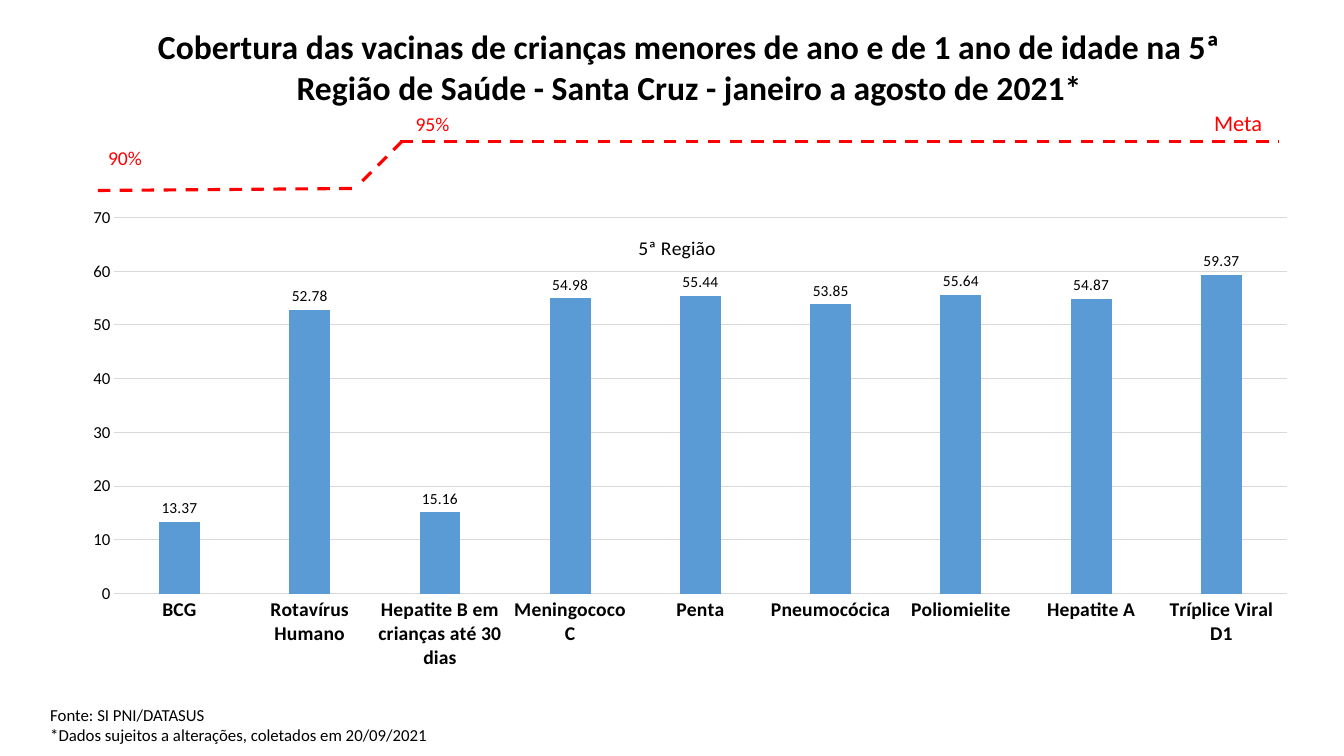
from dataclasses import dataclass
from lxml import etree
from pptx import Presentation
from pptx.chart.data import CategoryChartData
from pptx.dml.color import RGBColor
from pptx.enum.chart import XL_CHART_TYPE as ChartType
from pptx.enum.chart import XL_LABEL_POSITION as LabelPosition
from pptx.enum.chart import XL_TICK_MARK as TickMark
from pptx.enum.dml import MSO_LINE_DASH_STYLE as Dash
from pptx.enum.shapes import MSO_CONNECTOR as Connector
from pptx.enum.text import PP_ALIGN as Align
from pptx.oxml.ns import qn
from pptx.util import Inches, Pt


@dataclass(frozen=True)
class Theme:
    font: str = "Calibri"
    ink: RGBColor = RGBColor(0, 0, 0)
    goal: RGBColor = RGBColor(0xFF, 0, 0)
    bar: RGBColor = RGBColor(0x5B, 0x9B, 0xD5)
    grid: RGBColor = RGBColor(0xD9, 0xD9, 0xD9)
    title: int = 24
    goal_name: int = 16
    body: int = 14
    small: int = 12
    value: int = 11
    base: int = 10
    goal_line: float = 2.25
    grid_line: float = 0.75


THEME = Theme()

COVERAGE = {
    "BCG": 13.37,
    "Rotavírus Humano": 52.78,
    "Hepatite B em crianças até 30 dias": 15.16,
    "Meningococo C": 54.98,
    "Penta": 55.44,
    "Pneumocócica": 53.85,
    "Poliomielite": 55.64,
    "Hepatite A": 54.87,
    "Tríplice Viral D1": 59.37,
}


def style_font(font, size, color=THEME.ink, bold=False):
    font.name, font.size, font.bold = THEME.font, Pt(size), bold
    font.color.rgb = color


def add_text(slide, box, lines, size, color=THEME.ink, bold=False,
             align=Align.LEFT, wrap=True):
    frame = slide.shapes.add_textbox(*map(Inches, box)).text_frame
    frame.word_wrap = wrap
    for i, line in enumerate(lines):
        paragraph = frame.add_paragraph() if i else frame.paragraphs[0]
        paragraph.alignment = align
        run = paragraph.add_run()
        run.text = line
        style_font(run.font, size, color, bold)


def set_layout(parent, index, **values):
    """Give a chart part a manual layout as fractions of the chart."""
    old = parent.find(qn("c:layout"))
    if old is not None:
        parent.remove(old)
    layout = etree.Element(qn("c:layout"))
    parent.insert(index, layout)
    manual = etree.SubElement(layout, qn("c:manualLayout"))
    for tag, value in values.items():
        etree.SubElement(manual, qn(f"c:{tag}")).set("val", str(value))


# Dashed goal line: 90% for the first vaccines, 95% for the rest
def add_goal_line(slide, box):
    left, top, width, height = box
    group = slide.shapes.add_group_shape()
    segments = [
        ((0, height), (2.54, height - 0.02)),
        ((3.02, 0), (2.56, height - 0.03)),
        ((3, 0), (width, 0)),
    ]
    for (x1, y1), (x2, y2) in segments:
        segment = group.shapes.add_connector(
            Connector.STRAIGHT, Inches(left + x1), Inches(top + y1),
            Inches(left + x2), Inches(top + y2))
        segment.line.color.rgb = THEME.goal
        segment.line.width = Pt(THEME.goal_line)
        segment.line.dash_style = Dash.DASH
        etree.SubElement(segment._element.spPr, qn("a:effectLst"))


def add_goal_labels(slide, box):
    left, top, width, _ = box
    labels = [
        ("90%", (left, top, 0.54, 0.34), THEME.body),
        ("95%", (left + 3.05, top - 0.34, 0.54, 0.34), THEME.body),
        ("Meta", (left + width - 0.75, top - 0.37, 0.68, 0.37), THEME.goal_name),
    ]
    for label, place, size in labels:
        add_text(slide, place, [label], size, THEME.goal,
                 align=Align.CENTER, wrap=False)


# Column chart of coverage by vaccine
def add_coverage_chart(slide, box):
    data = CategoryChartData()
    data.categories = list(COVERAGE)
    data.add_series("5ª Região", list(COVERAGE.values()))
    chart = slide.shapes.add_chart(
        ChartType.COLUMN_CLUSTERED, *map(Inches, box), data).chart
    style_font(chart.font, THEME.base)
    chart.has_legend = False

    # Title inside the plot
    chart.has_title = True
    heading = chart.chart_title.text_frame.paragraphs[0].add_run()
    heading.text = "5ª Região"
    style_font(heading.font, THEME.body)
    set_layout(chart.chart_title._element, 1, xMode="edge", yMode="edge",
               x=0.47, y=0.045)
    set_layout(chart._chartSpace.chart.plotArea, 0, layoutTarget="inner",
               xMode="edge", yMode="edge", x=0.05, y=0.018, w=0.946, h=0.793)

    # Axes
    vaccines, percent = chart.category_axis, chart.value_axis
    for axis in (vaccines, percent):
        axis.major_tick_mark = axis.minor_tick_mark = TickMark.NONE
    style_font(vaccines.tick_labels.font, THEME.body, bold=True)
    style_font(percent.tick_labels.font, THEME.small)
    percent.minimum_scale, percent.maximum_scale, percent.major_unit = 0, 70, 10
    percent.format.line.fill.background()
    for line in (vaccines.format.line, percent.major_gridlines.format.line):
        line.color.rgb = THEME.grid
        line.width = Pt(THEME.grid_line)

    # Columns and their values
    plot = chart.plots[0]
    plot.gap_width, plot.overlap, plot.vary_by_categories = 219, -27, False
    columns = plot.series[0]
    columns.format.fill.solid()
    columns.format.fill.fore_color.rgb = THEME.bar
    values = columns.data_labels
    values.show_value = True
    values.position = LabelPosition.OUTSIDE_END
    style_font(values.font, THEME.value)


def build_slide(slide):
    goal_box = (0.97, 1.4, 11.72, 0.49)
    add_text(slide, (0.4, 6.94, 6.96, 0.5),
             ["Fonte: SI PNI/DATASUS",
              "*Dados sujeitos a alterações, coletados em 20/09/2021"],
             THEME.small)
    add_goal_line(slide, goal_box)
    add_coverage_chart(slide, (0.52, 2.06, 12.29, 4.72))
    add_text(slide, (0.97, 0.21, 11.73, 0.91),
             ["Cobertura das vacinas de crianças menores de ano e de 1 ano de "
              "idade na 5ª Região de Saúde - Santa Cruz - janeiro a agosto de 2021*"],
             THEME.title, bold=True, align=Align.CENTER)
    add_goal_labels(slide, goal_box)


def main():
    deck = Presentation()
    deck.slide_width, deck.slide_height = Inches(13.33), Inches(7.5)
    build_slide(deck.slides.add_slide(deck.slide_layouts[6]))
    deck.save("out.pptx")


if __name__ == "__main__":
    main()
